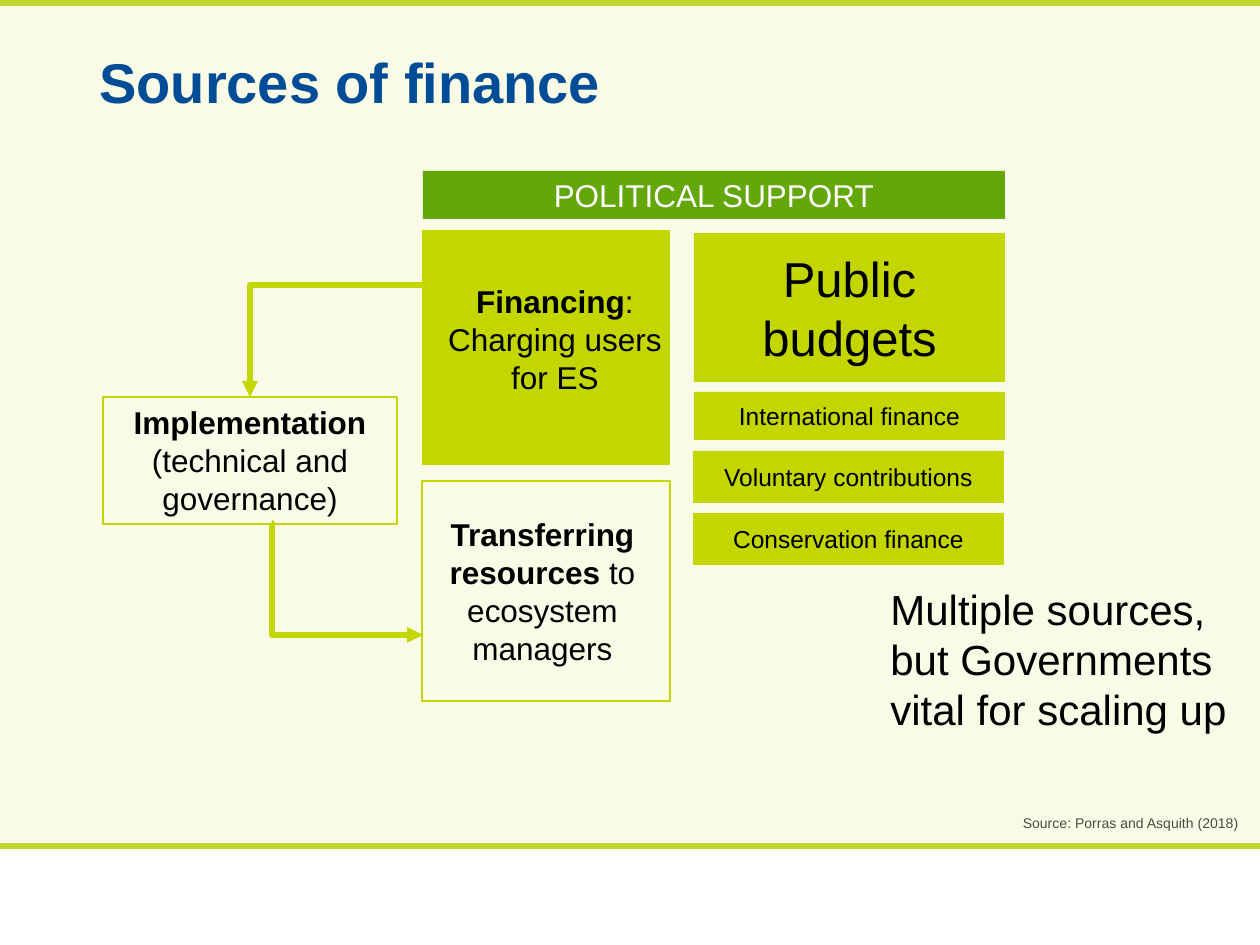
"""Build the slide on sources of finance."""
from lxml import etree
from pptx import Presentation
from pptx.dml.color import RGBColor
from pptx.enum.shapes import MSO_CONNECTOR, MSO_SHAPE
from pptx.enum.text import MSO_ANCHOR, PP_ALIGN
from pptx.oxml.ns import qn
from pptx.util import Pt

PX = 914400 / 126
WHITE = RGBColor(0xFF, 0xFF, 0xFF)
BLACK = RGBColor(0x00, 0x00, 0x00)
GREY = RGBColor(0x4B, 0x4B, 0x45)
BLUE = RGBColor(0x00, 0x4C, 0x96)
LIME = RGBColor(0xC3, 0xD6, 0x00)
BAND = RGBColor(0xC3, 0xD6, 0x31)
GREEN = RGBColor(0x64, 0xA7, 0x0B)
CREAM = RGBColor(0xF9, 0xFB, 0xE6)


def px(*lengths):
    return [round(length * PX) for length in lengths]


def write(shape, paragraphs, size, color=BLACK, align=PP_ALIGN.CENTER, anchor=MSO_ANCHOR.TOP):
    frame = shape.text_frame
    frame.word_wrap = True
    frame.vertical_anchor = anchor
    for index, runs in enumerate(paragraphs):
        paragraph = frame.add_paragraph() if index else frame.paragraphs[0]
        paragraph.alignment = align
        paragraph.font.name = "Arial"
        paragraph.font.size = Pt(size)
        paragraph.font.color.rgb = color
        for text, bold in runs:
            run = paragraph.add_run()
            run.text = text
            run.font.bold = bold


def add_text(slide, box, paragraphs, size, **style):
    shape = slide.shapes.add_textbox(*px(*box))
    write(shape, paragraphs, size, **style)
    return shape


def add_box(slide, box, fill=None, line=None):
    shape = slide.shapes.add_shape(MSO_SHAPE.RECTANGLE, *px(*box))
    shape.shadow.inherit = False
    if fill is None:
        shape.fill.background()
    else:
        shape.fill.solid()
        shape.fill.fore_color.rgb = fill
    if line is None:
        shape.line.fill.background()
    else:
        shape.line.color.rgb = line
        shape.line.width = Pt(1)
    return shape


def add_label(slide, box, text, size, fill=LIME, color=BLACK):
    shape = add_box(slide, box, fill)
    write(shape, [[(text, False)]], size, color, anchor=MSO_ANCHOR.MIDDLE)


def add_elbow_arrow(slide, start, end, preset, bend=None):
    connector = slide.shapes.add_connector(MSO_CONNECTOR.ELBOW, *px(*start, *end))
    connector.line.color.rgb = LIME
    connector.line.width = Pt(3)
    properties = connector._element.spPr
    etree.SubElement(properties.find(qn("a:ln")), qn("a:tailEnd"), type="triangle")
    etree.SubElement(properties, qn("a:effectLst"))
    geometry = properties.find(qn("a:prstGeom"))
    geometry.set("prst", preset)
    if bend is not None:
        adjustments = geometry.find(qn("a:avLst"))
        etree.SubElement(adjustments, qn("a:gd"), name="adj1", fmla=f"val {bend}")


def add_frame(slide):
    background = slide.background.fill
    background.solid()
    background.fore_color.rgb = CREAM
    add_box(slide, (0, 849, 1260, 96), WHITE)
    for top in (843, 0):
        add_box(slide, (0, top, 1260, 6), BAND)
    title = add_text(slide, (87, 14, 1086, 142), [[("Sources of finance", True)]], 32,
                     color=BLUE, align=PP_ALIGN.LEFT, anchor=MSO_ANCHOR.MIDDLE)
    title.text_frame.paragraphs[0].line_spacing = 0.9
    add_text(slide, (819, 808, 432, 30), [[("Source: Porras and Asquith (2018)", False)]], 8,
             color=GREY, align=PP_ALIGN.RIGHT)


def add_process(slide):
    implementation = (103, 397, 294, 127)
    add_box(slide, implementation, line=LIME)
    add_box(slide, (422, 230, 248, 235), LIME)
    add_box(slide, (422, 481, 248, 220), line=LIME)
    add_text(slide, (431, 276, 248, 127),
             [[("Financing", True), (":", False)], [("Charging users for ES", False)]], 18)
    add_text(slide, (431, 509, 223, 165),
             [[("Transferring resources ", True), ("to ecosystem managers", False)]], 18)
    add_text(slide, implementation,
             [[("Implementation", True)], [("(technical and governance)", False)]], 18)
    add_elbow_arrow(slide, (422, 285), (250, 397), "bentConnector2")
    add_elbow_arrow(slide, (272, 523), (423, 635), "bentConnector3", bend=100)


def add_sources(slide):
    add_label(slide, (423, 171, 582, 48), "POLITICAL SUPPORT", 18, GREEN, WHITE)
    add_label(slide, (694, 233, 311, 149), "Public budgets", 28)
    for left, top, height, text in (
        (694, 392, 48, "International finance"),
        (693, 451, 52, "Voluntary contributions"),
        (693, 513, 52, "Conservation finance"),
    ):
        add_label(slide, (left, top, 311, height), text, 14)
    add_text(slide, (878, 577, 367, 165),
             [[("Multiple sources, but Governments vital for scaling up", False)]], 24,
             align=PP_ALIGN.LEFT)


def main():
    presentation = Presentation()
    presentation.slide_width, presentation.slide_height = px(1260, 945)
    slide = presentation.slides.add_slide(presentation.slide_layouts[6])
    add_frame(slide)
    add_process(slide)
    add_sources(slide)
    presentation.save("out.pptx")


if __name__ == "__main__":
    main()
